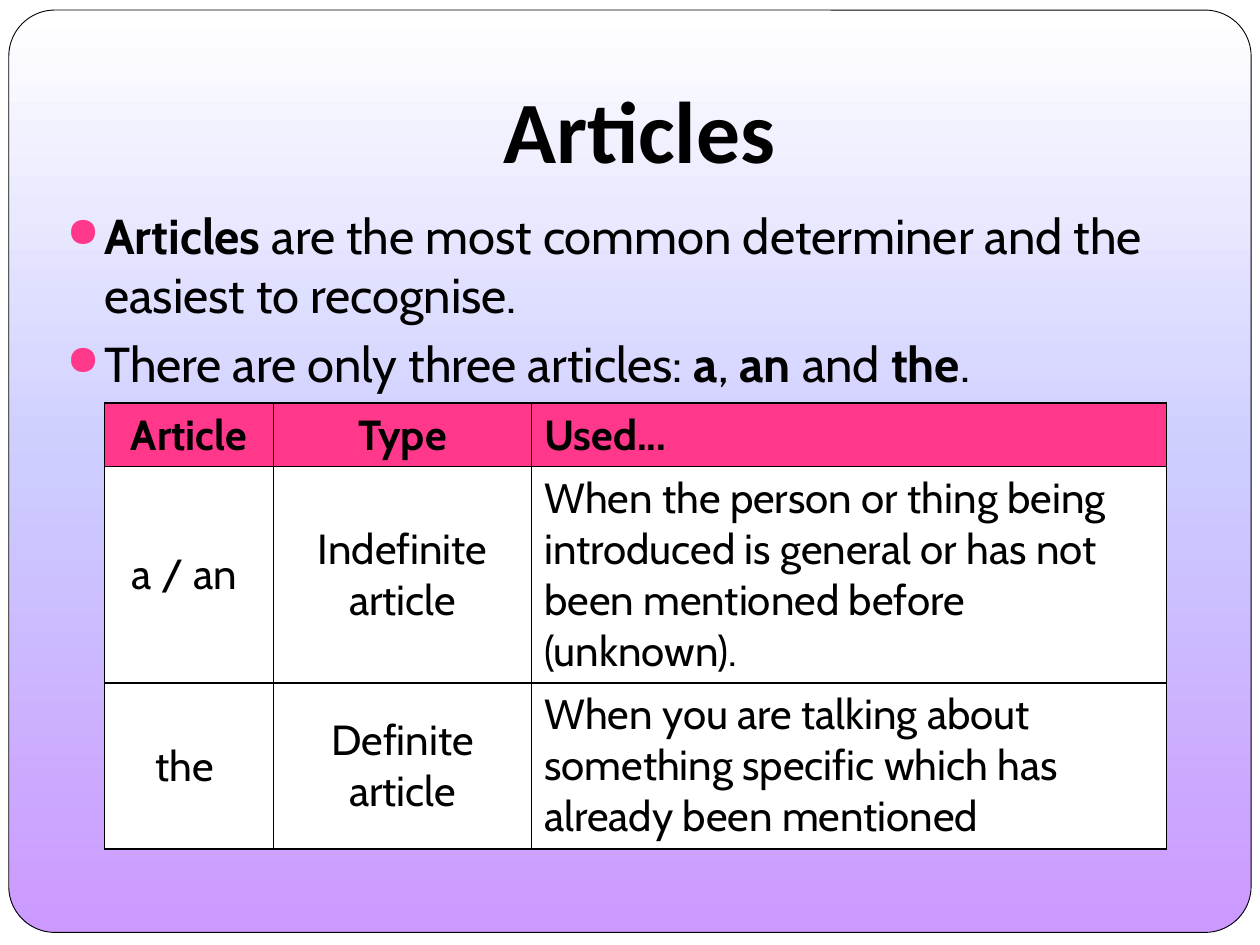
from lxml.etree import SubElement
from pptx import Presentation
from pptx.dml.color import RGBColor
from pptx.enum.shapes import MSO_SHAPE
from pptx.enum.text import MSO_ANCHOR, PP_ALIGN
from pptx.oxml import parse_xml
from pptx.oxml.ns import nsdecls, qn
from pptx.util import Inches, Pt

BLACK = RGBColor(0x00, 0x00, 0x00)
WHITE = RGBColor(0xFF, 0xFF, 0xFF)
PINK = RGBColor(0xFF, 0x38, 0x8C)
LAVENDER = RGBColor(0xCC, 0xCC, 0xFF)
PURPLE = RGBColor(0xCC, 0x99, 0xFF)
STOPS = [(0, WHITE), (50, LAVENDER), (100, PURPLE)]

TITLE = "Articles"
BULLETS = [
    [("Articles", True),
     (" are the most common determiner and the easiest to recognise.", False)],
    [("There are only three articles: ", False), ("a", True), (", ", False),
     ("an", True), (" and ", False), ("the", True), (".", False)],
]
ROWS = [
    ("Article", "Type", "Used..."),
    ("a / an ", "Indefinite article",
     "When the person or thing being introduced is general or has not "
     "been mentioned before (unknown)."),
    ("the ", "Definite article",
     "When you are talking about something specific which has already "
     "been mentioned"),
]
COL_WIDTHS = [1.34, 2.05, 5.04]
ROW_HEIGHTS = [0.5, 1.72, 1.32]
TITLE_FONT = {"name": "Calibri", "size": Pt(50), "bold": True}
BODY_FONT = {"name": "Cabin", "size": Pt(28)}
CELL_FONT = {"name": "Cabin", "size": Pt(24)}


def box(*lengths):
    return [Inches(n) for n in lengths]


def add_run(p, text, **fmt):
    r = p.add_run()
    r.text = text
    r.font.color.rgb = BLACK
    for key, value in fmt.items():
        setattr(r.font, key, value)


def add_text_box(s, place, **fmt):
    tf = s.shapes.add_textbox(*box(*place)).text_frame
    for key, value in {"word_wrap": True, **fmt}.items():
        setattr(tf, key, value)
    return tf


def fill_gradient(sp):
    stops = "".join(f'<a:gs pos="{pos * 1000}"><a:srgbClr val="{color}"/></a:gs>'
                    for pos, color in STOPS)
    sp.fill.background()
    old = sp._element.spPr.find(qn("a:noFill"))
    old.getparent().replace(old, parse_xml(
        f'<a:gradFill {nsdecls("a")} rotWithShape="1"><a:gsLst>{stops}</a:gsLst>'
        '<a:lin ang="5400000" scaled="0"/></a:gradFill>'))


def add_bullet(p):
    pPr = p._p.get_or_add_pPr()
    indent = Inches(0.3)
    pPr.set("marL", str(indent))
    pPr.set("indent", str(-indent))
    SubElement(SubElement(pPr, qn("a:buClr")), qn("a:srgbClr"), val=str(PINK))
    SubElement(pPr, qn("a:buSzPct"), val="85000")
    SubElement(pPr, qn("a:buChar"), char="●")


def add_borders(cell):
    tcPr = cell._tc.get_or_add_tcPr()
    for i, side in enumerate(("lnL", "lnR", "lnT", "lnB")):
        tcPr.insert(i, parse_xml(
            f'<a:{side} {nsdecls("a")} w="{Pt(1)}"><a:solidFill>'
            f'<a:srgbClr val="{BLACK}"/></a:solidFill></a:{side}>'))


def add_background(s):
    sp = s.shapes.add_shape(MSO_SHAPE.RECTANGLE, *box(0, 0, 10, 7.5))
    sp.shadow.inherit = False
    sp.fill.solid()
    sp.fill.fore_color.rgb = WHITE
    sp.line.fill.background()
    sp = s.shapes.add_shape(MSO_SHAPE.ROUNDED_RECTANGLE, *box(0.07, 0.08, 9.86, 7.32))
    sp.shadow.inherit = False
    sp.adjustments[0] = 0.05
    fill_gradient(sp)
    sp.line.color.rgb = BLACK
    sp.line.width = Pt(0.5)


def add_article_table(s):
    place = box(0.83, 3.2, sum(COL_WIDTHS), sum(ROW_HEIGHTS))
    table = s.shapes.add_table(len(ROWS), len(COL_WIDTHS), *place).table
    for col, width in zip(table.columns, COL_WIDTHS):
        col.width = Inches(width)
    for i, (row, height) in enumerate(zip(table.rows, ROW_HEIGHTS)):
        row.height = Inches(height)
        for j, cell in enumerate(row.cells):
            cell.fill.solid()
            cell.fill.fore_color.rgb = WHITE if i else PINK
            add_borders(cell)
            p = cell.text_frame.paragraphs[0]
            if j < 2:
                cell.vertical_anchor = MSO_ANCHOR.MIDDLE
                p.alignment = PP_ALIGN.CENTER
            add_run(p, ROWS[i][j], bold=i == 0, **CELL_FONT)


def main():
    prs = Presentation()
    prs.slide_width, prs.slide_height = box(10, 7.5)
    s = prs.slides.add_slide(prs.slide_layouts[6])
    add_background(s)

    tf = add_text_box(s, (0.67, 0.29, 8.81, 1.25), margin_bottom=Inches(0.1),
                      vertical_anchor=MSO_ANCHOR.BOTTOM)
    p = tf.paragraphs[0]
    p.alignment = PP_ALIGN.CENTER
    add_run(p, TITLE, **TITLE_FONT)

    tf = add_text_box(s, (0.43, 1.58, 9.07, 5))
    for i, runs in enumerate(BULLETS):
        p = tf.add_paragraph() if i else tf.paragraphs[0]
        p.space_before = Pt(5.8)
        add_bullet(p)
        for text, bold in runs:
            add_run(p, text, bold=bold, **BODY_FONT)

    add_article_table(s)
    prs.save("out.pptx")


if __name__ == "__main__":
    main()
